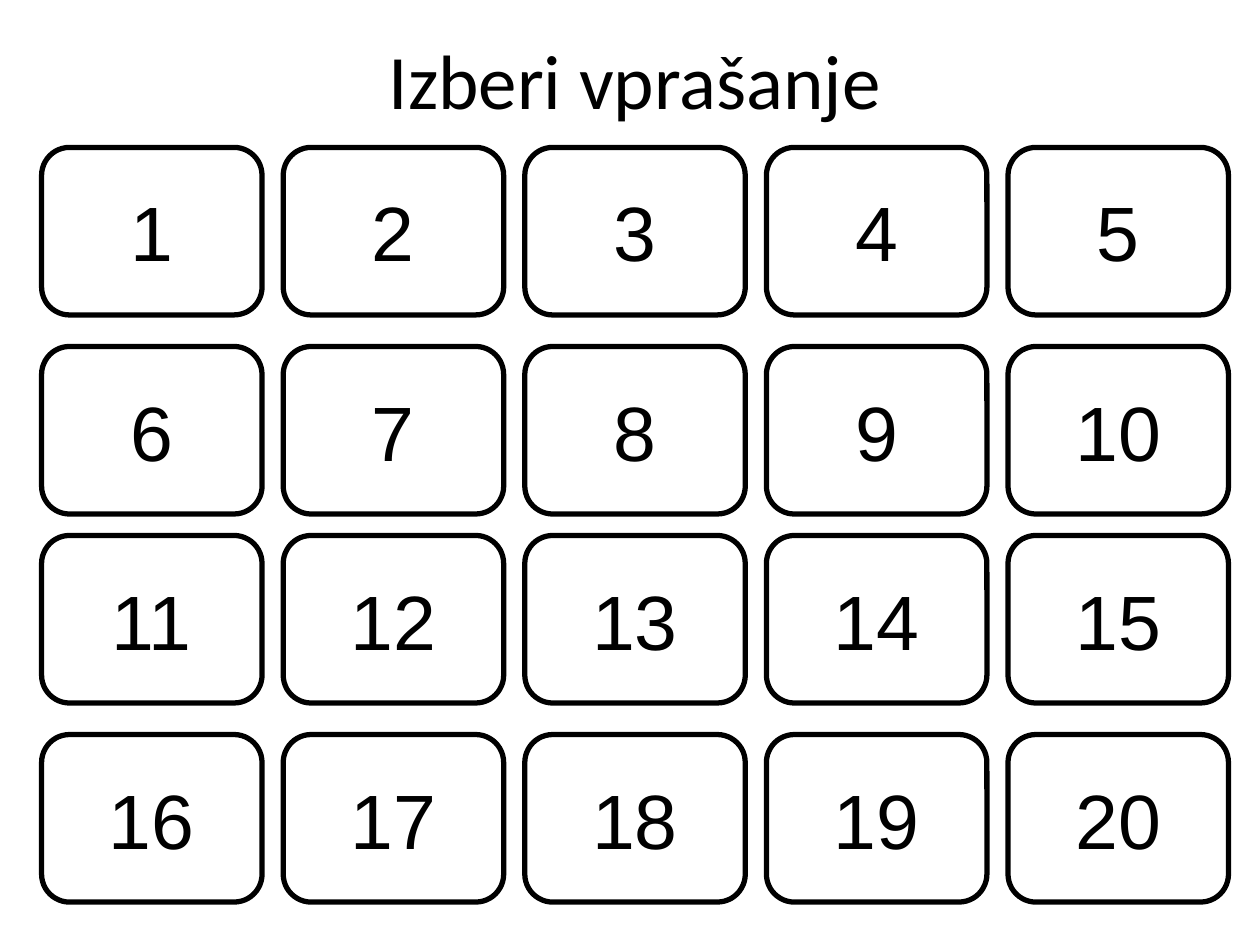
from pptx import Presentation
from pptx.dml.color import RGBColor
from pptx.enum.shapes import MSO_SHAPE
from pptx.enum.text import MSO_ANCHOR, PP_ALIGN
from pptx.util import Inches, Pt

ROUND = MSO_SHAPE.ROUNDED_RECTANGLE
MIDDLE = MSO_ANCHOR.MIDDLE
CENTER = PP_ALIGN.CENTER

COLORS = {"ink": "000000"}

# Card grid, in inches
COLS = 5
LEFT, STEP = 0.33, 1.9175
ROWS = [1.17, 2.75, 4.25, 5.83]
WIDTH, HEIGHT = 1.75, 1.33


def color(name):
    return RGBColor.from_string(COLORS[name])


def write(frame, text, font="Arial", size=44, ink="ink", wrap=True):
    frame.word_wrap = wrap
    frame.vertical_anchor = MIDDLE
    par = frame.paragraphs[0]
    par.alignment = CENTER
    run = par.add_run()
    run.text = text
    run.font.name = font
    run.font.size = Pt(size)
    run.font.color.rgb = color(ink)


class Board:
    def __init__(self, slide, line=3, bend=0.167):
        self.slide = slide
        self.line = line
        self.bend = bend

    def title(self, text, left, top, width, height):
        box = self.slide.shapes.title
        box.left, box.top = Inches(left), Inches(top)
        box.width, box.height = Inches(width), Inches(height)
        write(box.text_frame, text, font="Calibri")

    def card(self, text, left, top):
        card = self.slide.shapes.add_shape(
            ROUND, Inches(left), Inches(top), Inches(WIDTH), Inches(HEIGHT))
        card.adjustments[0] = self.bend
        card.shadow.inherit = False
        card.fill.background()
        card.line.color.rgb = color("ink")
        card.line.width = Pt(self.line)
        write(card.text_frame, text, wrap=False)


def main():
    deck = Presentation()
    deck.slide_width, deck.slide_height = Inches(10), Inches(7.5)
    board = Board(deck.slides.add_slide(deck.slide_layouts[5]))

    # Heading
    board.title("Izberi vprašanje", 0.54, 0, 9, 1.25)

    # Numbered question cards
    for row, top in enumerate(ROWS):
        for col in range(COLS):
            board.card(str(row * COLS + col + 1), LEFT + col * STEP, top)

    deck.save("out.pptx")


if __name__ == "__main__":
    main()
